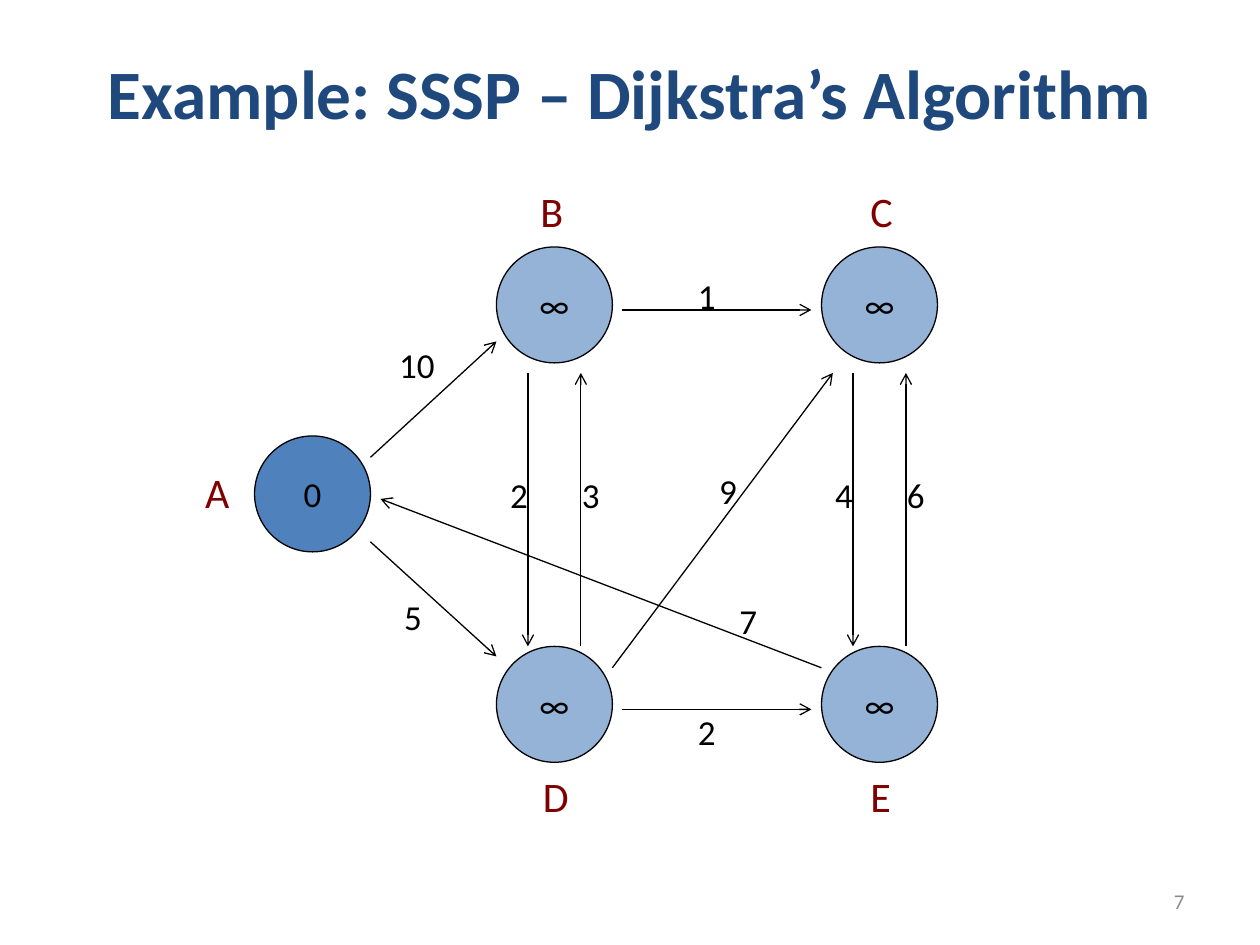
from lxml.etree import SubElement
from pptx import Presentation
from pptx.dml.color import RGBColor
from pptx.enum.shapes import MSO_CONNECTOR, MSO_SHAPE
from pptx.enum.text import MSO_ANCHOR, MSO_AUTO_SIZE, PP_ALIGN
from pptx.oxml.ns import qn
from pptx.util import Inches, Pt

# Content
TITLE = "Example: SSSP – Dijkstra’s Algorithm"
PAGE = "7"
DIAMETER = 0.92
# node: (left, top, distance, fill)
NODES = {
    "A": (2.02, 3.46, "0", "4F81BD"),
    "B": (3.94, 1.96, "∞", "95B3D7"),
    "D": (3.94, 5.13, "∞", "95B3D7"),
    "C": (6.52, 1.96, "∞", "95B3D7"),
    "E": (6.52, 5.13, "∞", "95B3D7"),
}
# name: (left, top, width)
NAME_PLACES = {
    "A": (1.53, 3.65, 0.4),
    "B": (4.19, 1.42, 0.39),
    "C": (6.81, 1.42, 0.39),
    "D": (4.21, 6.07, 0.41),
    "E": (6.81, 6.07, 0.37),
}
# weight, label left, label top, start, end
DIAGONAL_EDGES = [
    ("10", 3.07, 2.68, (2.94, 3.63), (3.94, 2.71)),
    ("5", 3.11, 4.68, (2.94, 4.3), (3.94, 5.21)),
    ("9", 5.61, 3.68, (4.86, 5.3), (6.61, 2.96)),
    ("7", 5.77, 4.71, (6.52, 5.3), (3.02, 3.96)),
]
# left node, weight, label top
ACROSS_EDGES = [("B", "1", 2.13), ("D", "2", 5.59)]
# top node, bottom node, weight down, weight up
VERTICAL_PAIRS = [("B", "D", "2", "3"), ("C", "E", "4", "6")]


def color(hex_value):
    return RGBColor.from_string(hex_value)


def write(shape, words, size, hex_value, align=PP_ALIGN.LEFT, bold=False):
    paragraph = shape.text_frame.paragraphs[0]
    paragraph.text = words
    paragraph.alignment = align
    font = paragraph.font
    font.name, font.size, font.bold = "Calibri", Pt(size), bold
    font.color.rgb = color(hex_value)


def add_label(shapes, words, left, top, width, height, size, hex_value):
    label = shapes.add_textbox(*map(Inches, (left, top, width, height)))
    label.text_frame.word_wrap = False
    label.text_frame.auto_size = MSO_AUTO_SIZE.SHAPE_TO_FIT_TEXT
    write(label, words, size, hex_value)


def add_node(shapes, left, top, distance, fill):
    node = shapes.add_shape(
        MSO_SHAPE.OVAL, *map(Inches, (left, top, DIAMETER, DIAMETER)))
    node.shadow.inherit = False
    node.fill.solid()
    node.fill.fore_color.rgb = color(fill)
    node.line.color.rgb = color("000000")
    node.line.width = Pt(0.75)
    node.text_frame.vertical_anchor = MSO_ANCHOR.MIDDLE
    write(node, distance, 20, "000000", PP_ALIGN.CENTER)


def add_edge(shapes, weight, label_left, label_top, start, end):
    edge = shapes.add_connector(
        MSO_CONNECTOR.STRAIGHT, *map(Inches, start + end))
    edge.line.color.rgb = color("000000")
    edge.line.width = Pt(0.75)
    SubElement(edge.line._get_or_add_ln(), qn("a:tailEnd"), type="arrow")
    SubElement(edge._element.spPr, qn("a:effectLst"))
    width = 0.49 if len(weight) > 1 else 0.34
    add_label(shapes, weight, label_left, label_top, width, 0.44, 20, "000000")


def all_edges():
    edges = list(DIAGONAL_EDGES)
    for name, weight, label_top in ACROSS_EDGES:
        left, top = NODES[name][:2]
        start = left + DIAMETER + 0.08
        edges.append((weight, start + 0.5, label_top,
                      (start, top + 0.5), (start + 1.5, top + 0.5)))
    for upper, lower, down, up in VERTICAL_PAIRS:
        left, top = NODES[upper][:2]
        high, low = top + 1, NODES[lower][1]
        down_x, up_x = left + 0.25, left + 0.67
        edges.append((down, left + 0.01, 3.71, (down_x, high), (down_x, low)))
        edges.append((up, left + 0.58, 3.71, (up_x, low), (up_x, high)))
    return edges


def main():
    deck = Presentation()
    deck.slide_width, deck.slide_height = Inches(10), Inches(7.5)
    slide = deck.slides.add_slide(deck.slide_layouts[5])

    # Title
    title = slide.shapes.title
    title.left, title.top, title.width, title.height = map(
        Inches, (0.5, 0.17, 9, 1.12))
    title.text_frame.vertical_anchor = MSO_ANCHOR.MIDDLE
    write(title, TITLE, 39.6, "1F497D", PP_ALIGN.CENTER, bold=True)

    # Graph
    graph = slide.shapes.add_group_shape().shapes
    for node in NODES.values():
        add_node(graph, *node)
    for edge in all_edges():
        add_edge(graph, *edge)

    # Node names
    for name, (left, top, width) in NAME_PLACES.items():
        add_label(slide.shapes, name, left, top, width, 0.5, 24, "800000")

    # Page number
    page = slide.shapes.add_textbox(*map(Inches, (7.17, 6.95, 2.33, 0.4)))
    page.text_frame.word_wrap = True
    page.text_frame.vertical_anchor = MSO_ANCHOR.MIDDLE
    write(page, PAGE, 12, "8C8C8C", PP_ALIGN.RIGHT)

    deck.save("out.pptx")


if __name__ == "__main__":
    main()
